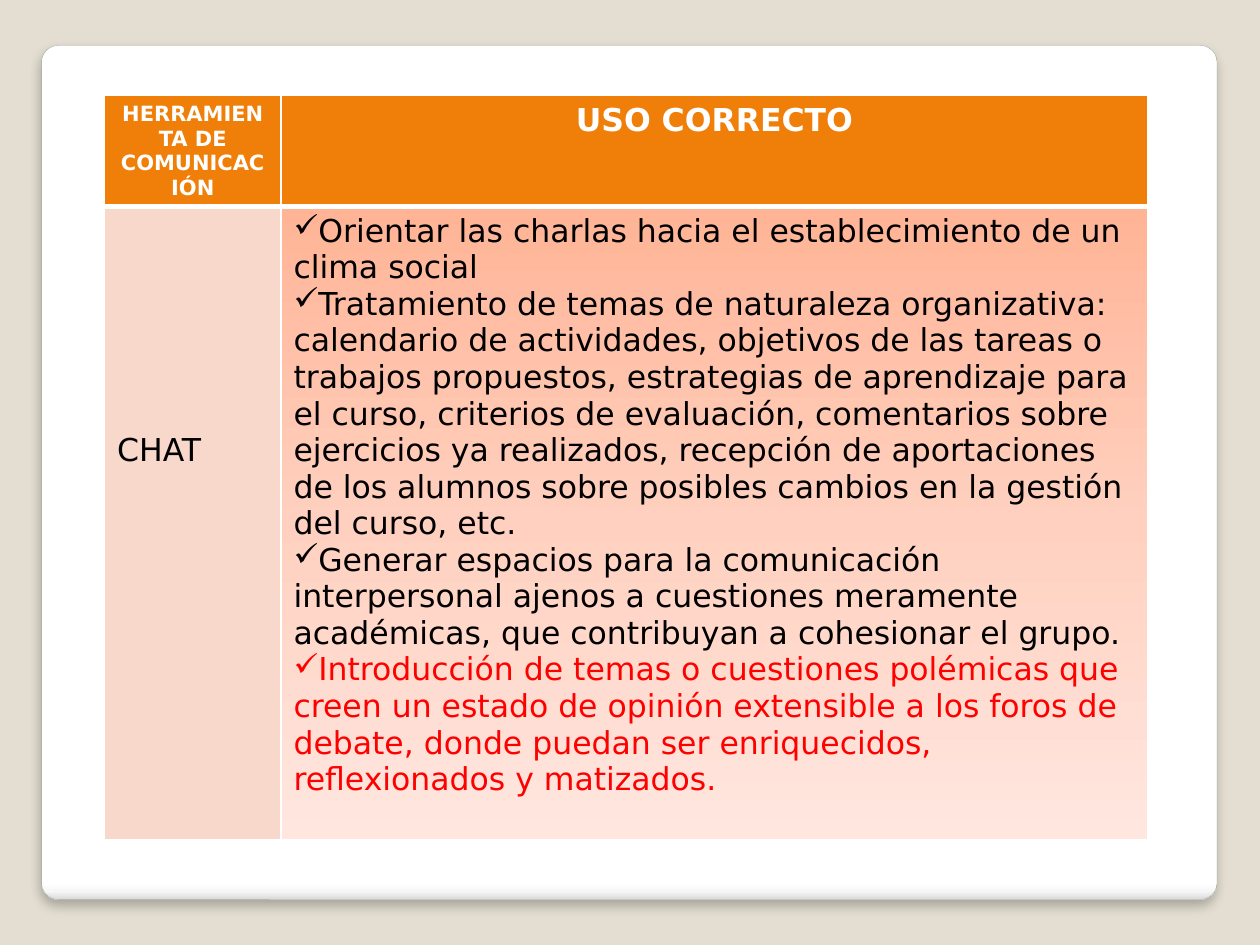
"""Build a slide with a table on the correct use of chat."""
from lxml.etree import SubElement
from pptx import Presentation
from pptx.dml.color import RGBColor as RGB
from pptx.enum.shapes import MSO_SHAPE as SHAPE
from pptx.enum.text import PP_ALIGN as ALIGN
from pptx.oxml import parse_xml
from pptx.oxml.ns import nsdecls, qn
from pptx.util import Inches, Pt

FONT = "DejaVu Sans"
HEADS = [("HERRAMIENTA DE COMUNICACIÓN", 12), ("USO CORRECTO", 18)]
TOOL = "CHAT"
USES = [
    ("Orientar las charlas hacia el establecimiento de un clima social", "000000"),
    ("Tratamiento de temas de naturaleza organizativa: calendario de actividades, "
     "objetivos de las tareas o trabajos propuestos, estrategias de aprendizaje para "
     "el curso, criterios de evaluación, comentarios sobre ejercicios ya realizados, "
     "recepción de aportaciones de los alumnos sobre posibles cambios en la gestión "
     "del curso, etc.", "000000"),
    ("Generar espacios para la comunicación interpersonal ajenos a cuestiones "
     "meramente académicas, que contribuyan a cohesionar el grupo.", "000000"),
    ("Introducción de temas o cuestiones polémicas que creen un estado de opinión "
     "extensible a los foros de debate, donde puedan ser enriquecidos, reflexionados "
     "y matizados.", "FF0000"),
]
COLS = [1.4, 6.88]
ROWS = [0.88, 5.02]
CARD_STOPS = [(0, "FFFFFF"), (98, "FFFFFF"), (99, "F7F7F7"), (100, "DADADA")]
USE_STOPS = [(0, "FFB496"), (50, "FFD0BF"), (100, "FFE7E0")]


def color(code):
    return RGB.from_string(code)


def solid(fill, code):
    fill.solid()
    fill.fore_color.rgb = color(code)


def blend(fill, props, stops):
    fill.gradient()
    fill.gradient_angle = 270
    group = props.find(".//" + qn("a:gsLst"))
    for old in list(group):
        group.remove(old)
    for pos, code in stops:
        stop = SubElement(group, qn("a:gs"), pos=str(pos * 1000))
        SubElement(stop, qn("a:srgbClr"), val=code)


def frame(cell, top, bottom):
    props = cell._tc.get_or_add_tcPr()
    for i, (side, width) in enumerate(zip("LRTB", (1, 1, top, bottom))):
        props.insert(i, parse_xml(
            f'<a:ln{side} {nsdecls("a")} w="{Pt(width)}"><a:solidFill>'
            f'<a:srgbClr val="FFFFFF"/></a:solidFill></a:ln{side}>'))


def write(cell, items, size, bold=False, align=ALIGN.LEFT, mark=None):
    cell.text_frame.text = "\n".join(text for text, _ in items)
    for para, (_, code) in zip(cell.text_frame.paragraphs, items):
        para.alignment = align
        if mark:
            SubElement(para._p.get_or_add_pPr(), qn("a:buChar"), char=mark)
        font = para.runs[0].font
        font.name, font.size, font.bold = FONT, Pt(size), bold
        font.color.rgb = color(code)


def add_card(slide):
    card = slide.shapes.add_shape(
        SHAPE.ROUNDED_RECTANGLE, Inches(0.33), Inches(0.36), Inches(9.33), Inches(6.78))
    card.adjustments[0] = 0.02
    props = card._element.spPr
    blend(card.fill, props, CARD_STOPS)
    card.line.color.rgb = color("A4A4A4")
    card.line.width = Pt(0.16)
    props.append(parse_xml(
        f'<a:effectLst {nsdecls("a")}><a:outerShdw blurRad="{Pt(6)}" dist="{Pt(4)}" '
        'dir="5400000" rotWithShape="0"><a:srgbClr val="000000"><a:alpha val="25000"/>'
        '</a:srgbClr></a:outerShdw></a:effectLst>'))


def add_grid(slide):
    grid = slide.shapes.add_table(
        len(ROWS), len(COLS), Inches(0.83), Inches(0.76),
        Inches(sum(COLS)), Inches(sum(ROWS))).table
    for col, width in zip(grid.columns, COLS):
        col.width = Inches(width)
    for row, height in zip(grid.rows, ROWS):
        row.height = Inches(height)
    for i, (text, size) in enumerate(HEADS):
        head = grid.cell(0, i)
        write(head, [(text, "FFFFFF")], size, True, ALIGN.CENTER)
        solid(head.fill, "F07F09")
        frame(head, 1, 3)
    tool, uses = grid.cell(1, 0), grid.cell(1, 1)
    write(tool, [(TOOL, "000000")], 18)
    tool.margin_top = Inches(1.79)
    solid(tool.fill, "F9D8CC")
    write(uses, USES, 18, mark="✓")
    blend(uses.fill, uses._tc.get_or_add_tcPr(), USE_STOPS)
    for cell in (tool, uses):
        frame(cell, 3, 1)


def main():
    deck = Presentation()
    deck.slide_width, deck.slide_height = Inches(10), Inches(7.5)
    slide = deck.slides.add_slide(deck.slide_layouts[6])
    solid(slide.background.fill, "E3DED1")
    add_card(slide)
    add_grid(slide)
    deck.save("out.pptx")


if __name__ == "__main__":
    main()
